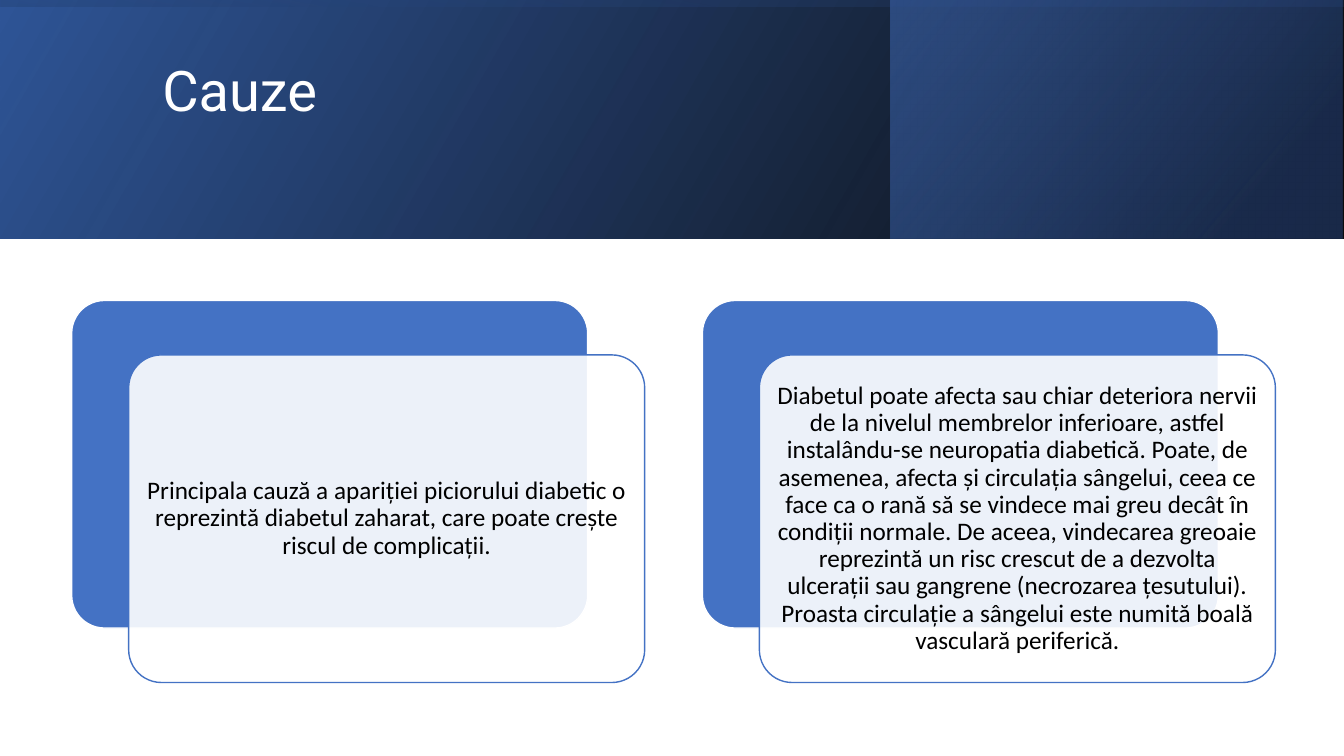
from pptx import Presentation
from pptx.dml.color import RGBColor
from pptx.enum.shapes import MSO_SHAPE
from pptx.enum.text import MSO_ANCHOR, PP_ALIGN
from pptx.oxml import parse_xml
from pptx.oxml.ns import nsdecls, qn
from pptx.util import Pt

RECTANGLE = MSO_SHAPE.RECTANGLE
ROUNDED = MSO_SHAPE.ROUNDED_RECTANGLE
TOP, MIDDLE = MSO_ANCHOR.TOP, MSO_ANCHOR.MIDDLE
LEFT, CENTER = PP_ALIGN.LEFT, PP_ALIGN.CENTER

COLORS = {
    "white": "FFFFFF",
    "black": "000000",
    "blue": "4472C4",
    "deep": "2F5597",
    "navy": "203864",
}


def rgb(name):
    return RGBColor.from_string(COLORS[name])


def write(shape, text, size, font, color, align, anchor, top=5.4, side=5.4):
    frame = shape.text_frame
    frame.word_wrap = True
    frame.vertical_anchor = anchor
    frame.margin_top = Pt(top)
    frame.margin_bottom = Pt(5.4)
    frame.margin_left = frame.margin_right = Pt(side)
    paragraph = frame.paragraphs[0]
    paragraph.alignment = align
    paragraph.line_spacing = 0.9
    run = paragraph.add_run()
    run.text = text
    run.font.size = Pt(size)
    run.font.name = font
    run.font.color.rgb = rgb(color)


prs = Presentation()
prs.slide_width = Pt(960)
prs.slide_height = Pt(540)
slide = prs.slides.add_slide(prs.slide_layouts[5])

banners = [
    ((0, 0, 960, 170.6), 0, 330, [(0, "black", 96), (100, "deep", 100)]),
    ((636.2, 0, 323, 170.6), 0, 320, [(19, "navy", 68), (100, "blue", 48)]),
    ((394.7, -394.7, 170.6, 960), 270, 350, [(23, "deep", 16), (99, "black", 45)]),
]
for box, rotation, angle, stops in banners:
    banner = slide.shapes.add_shape(RECTANGLE, *map(Pt, box))
    banner.shadow.inherit = False
    banner.line.fill.background()
    banner.fill.background()
    banner.rotation = rotation
    properties = banner._element.spPr
    properties.find(qn("a:xfrm")).set("flipH", "1")
    stop_list = "".join(
        f'<a:gs pos="{place * 1000}"><a:srgbClr val="{COLORS[color]}">'
        f'<a:alpha val="{opacity * 1000}"/></a:srgbClr></a:gs>'
        for place, color, opacity in stops
    )
    gradient = parse_xml(
        f'<a:gradFill {nsdecls("a")} rotWithShape="1"><a:gsLst>{stop_list}</a:gsLst>'
        f'<a:lin ang="{angle * 60000}" scaled="0"/></a:gradFill>'
    )
    properties.replace(properties.find(qn("a:noFill")), gradient)

title = slide.shapes.title
title._element.getparent().append(title._element)
title.left, title.top, title.width, title.height = map(Pt, (108.7, 27.4, 765.4, 123.8))
write(title, "Cauze", 40, "Roboto", "white", LEFT, TOP, top=18, side=7.2)

causes = [
    "Principala cauză a apariției piciorului diabetic o reprezintă diabetul zaharat, "
    "care poate crește riscul de complicații.",
    "Diabetul poate afecta sau chiar deteriora nervii de la nivelul membrelor "
    "inferioare, astfel instalându-se neuropatia diabetică. Poate, de asemenea, "
    "afecta și circulația sângelui, ceea ce face ca o rană să se vindece mai greu "
    "decât în condiții normale. De aceea, vindecarea greoaie reprezintă un risc "
    "crescut de a dezvolta ulcerații sau gangrene (necrozarea țesutului). Proasta "
    "circulație a sângelui este numită boală vasculară periferică.",
]
for index, cause in enumerate(causes):
    left = 51.2 + index * 450.5
    for dx, dy, fill, outline in [(0, 0, "blue", "white"), (40.7, 38.9, "white", "blue")]:
        card = slide.shapes.add_shape(
            ROUNDED, Pt(left + dx), Pt(214.6 + dy), Pt(368.6), Pt(234)
        )
        card.adjustments[0] = 0.1
        card.shadow.inherit = False
        card.fill.solid()
        card.fill.fore_color.rgb = rgb(fill)
        card.line.color.rgb = rgb(outline)
        card.line.width = Pt(1)
    front_color = card._element.spPr.find(qn("a:solidFill"))[0]
    front_color.append(parse_xml(f'<a:alpha {nsdecls("a")} val="90000"/>'))
    write(card, cause, 18, "Calibri", "black", CENTER, MIDDLE)

prs.save("out.pptx")
